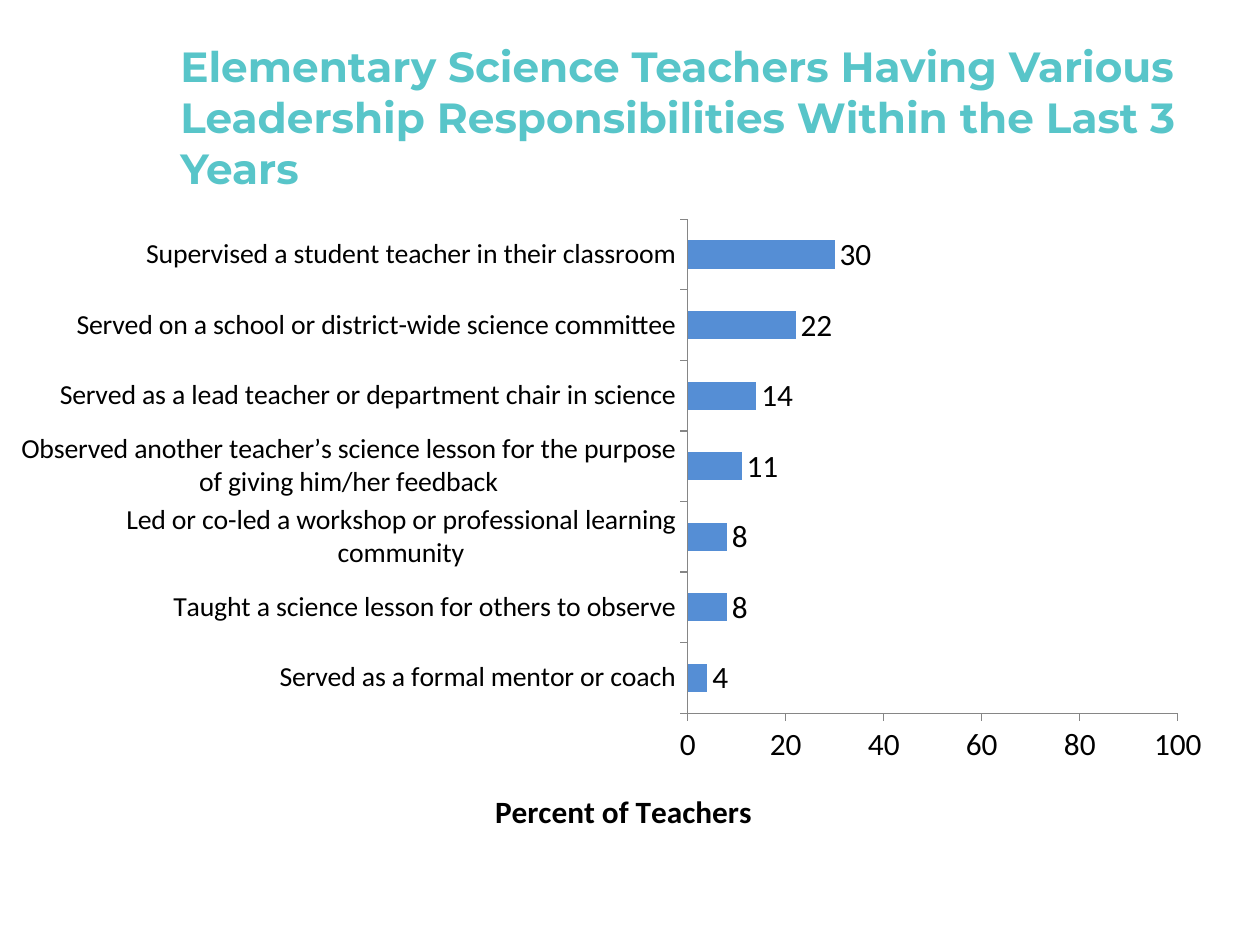
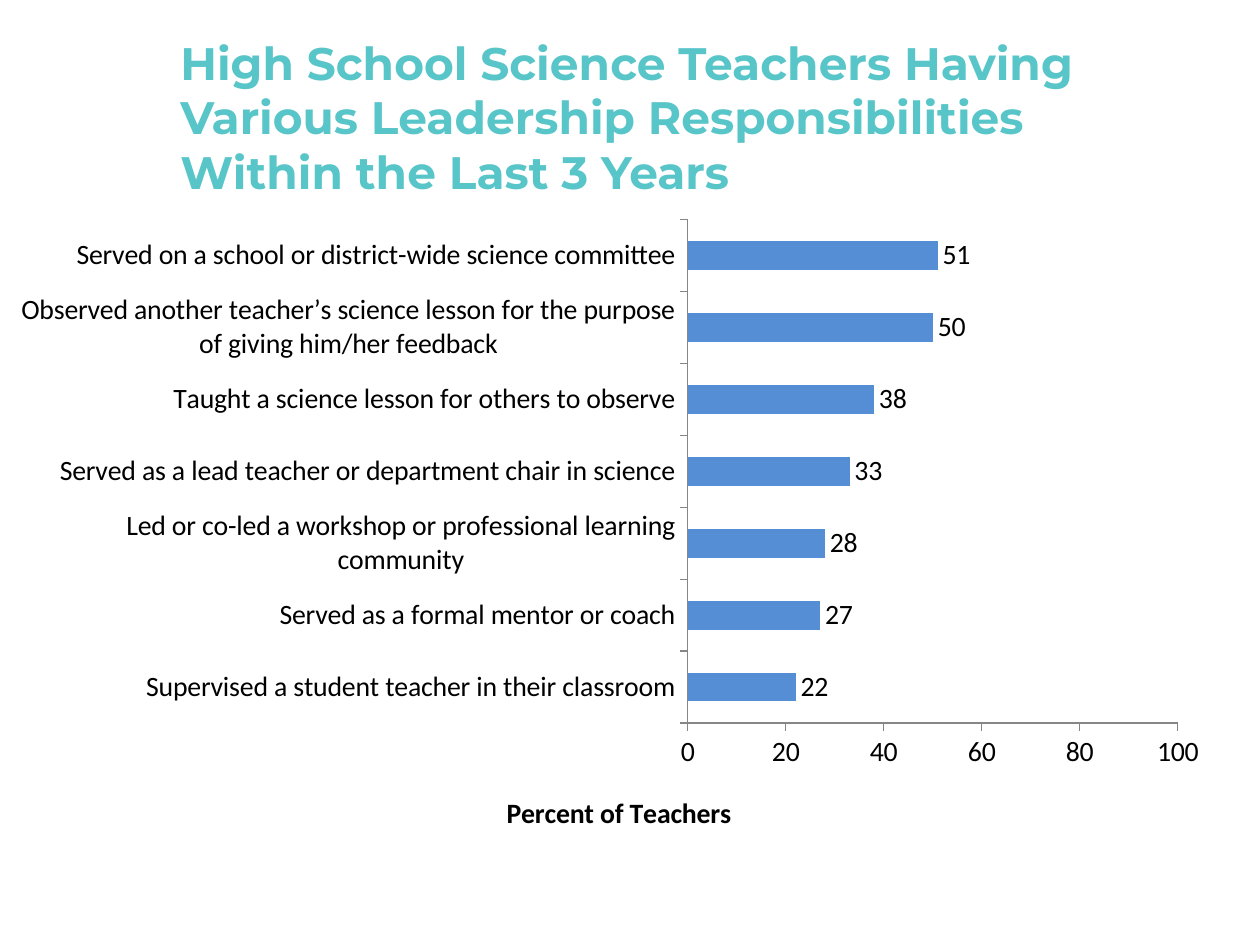
from pptx import Presentation
from pptx.chart.data import CategoryChartData
from pptx.dml.color import RGBColor
from pptx.enum.chart import XL_CHART_TYPE as ChartType
from pptx.enum.chart import XL_LABEL_POSITION as LabelPosition
from pptx.enum.chart import XL_TICK_MARK as TickMark
from pptx.enum.text import MSO_ANCHOR as Anchor
from pptx.enum.text import MSO_AUTO_SIZE as AutoSize
from pptx.enum.text import PP_ALIGN as Align
from pptx.oxml import parse_xml
from pptx.oxml.ns import nsdecls
from pptx.util import Cm, Pt

COLORS = {"title": "58C5C9", "bar": "558ED5", "text": "000000", "axis": "868686"}
TITLE_FONT = "Montserrat"
CHART_FONT = "Calibri"
TITLE_BOX = (Cm(3.38), Cm(0.76), Cm(20.75), Cm(3.18))
CHART_BOX = (Cm(0.43), Cm(4.04), Cm(24.56), Cm(12.9))
PLOT_AREA = {"x": 0.544, "y": 0.03, "w": 0.405, "h": 0.787}
CATEGORY_SIZE = 16

SUPERVISED = "Supervised a student teacher in their classroom"
COMMITTEE = "Served on a school or district-wide science committee"
LEAD = "Served as a lead teacher or department chair in science"
OBSERVED = "Observed another teacher’s science lesson for the purpose of giving him/her feedback"
WORKSHOP = "Led or co-led a workshop or professional learning community"
TAUGHT = "Taught a science lesson for others to observe"
MENTOR = "Served as a formal mentor or coach"

ELEMENTARY = {SUPERVISED: 30, COMMITTEE: 22, LEAD: 14, OBSERVED: 11,
              WORKSHOP: 8, TAUGHT: 8, MENTOR: 4}
HIGH_SCHOOL = {COMMITTEE: 51, OBSERVED: 50, TAUGHT: 38, LEAD: 33,
               WORKSHOP: 28, MENTOR: 27, SUPERVISED: 22}


def color(name):
    return RGBColor.from_string(COLORS[name])


def style_font(font, name, size, color_name, bold=False):
    font.name = name
    font.size = Pt(size)
    font.bold = bold
    font.color.rgb = color(color_name)


def add_title(page, school, size):
    box = page.shapes.title
    box.left, box.top, box.width, box.height = TITLE_BOX
    frame = box.text_frame
    frame.auto_size = AutoSize.NONE
    frame.word_wrap = True
    frame.vertical_anchor = Anchor.MIDDLE
    para = frame.paragraphs[0]
    para.alignment = Align.LEFT
    span = para.add_run()
    span.text = (f"{school} Science Teachers Having Various "
                 "Leadership Responsibilities Within the Last 3 Years")
    style_font(span.font, TITLE_FONT, size, "title", bold=True)


def make_layout(position, inner=False):
    target = '<c:layoutTarget val="inner"/>' if inner else ""
    modes = "".join(f'<c:{key}Mode val="edge"/>' for key in "xy")
    values = "".join(f'<c:{key} val="{value}"/>' for key, value in position.items())
    return parse_xml(f'<c:layout {nsdecls("c")}><c:manualLayout>'
                     f"{target}{modes}{values}</c:manualLayout></c:layout>")


def place_parts(chart, title_position):
    space = chart._chartSpace
    plot_area = space.xpath(".//c:plotArea")[0]
    title = space.xpath(".//c:valAx/c:title")[0]
    for parent in (plot_area, title):
        for layout in parent.xpath("./c:layout"):
            parent.remove(layout)
    plot_area.insert(0, make_layout(PLOT_AREA, inner=True))
    title.xpath("./c:tx")[0].addnext(make_layout(title_position))


def style_axis(axis, size):
    axis.has_major_gridlines = False
    axis.major_tick_mark = TickMark.OUTSIDE
    axis.minor_tick_mark = TickMark.NONE
    axis.format.line.color.rgb = color("axis")
    axis.format.line.width = Pt(0.75)
    style_font(axis.tick_labels.font, CHART_FONT, size, "text")


def add_bar_chart(page, percents, size, title_position):
    data = CategoryChartData()
    data.categories = list(reversed(percents.keys()))
    data.add_series("Series 1", list(reversed(percents.values())))
    chart = page.shapes.add_chart(ChartType.BAR_CLUSTERED, *CHART_BOX, data).chart
    chart.has_legend = False
    chart.has_title = False
    style_font(chart.font, CHART_FONT, size, "text")

    style_axis(chart.category_axis, CATEGORY_SIZE)
    axis = chart.value_axis
    style_axis(axis, size)
    axis.minimum_scale, axis.maximum_scale, axis.major_unit = 0, 100, 20
    span = axis.axis_title.text_frame.paragraphs[0].add_run()
    span.text = "Percent of Teachers"
    style_font(span.font, CHART_FONT, size, "text", bold=True)

    plot = chart.plots[0]
    plot.gap_width = 151
    plot.vary_by_categories = False
    bars = plot.series[0]
    bars.format.fill.solid()
    bars.format.fill.fore_color.rgb = color("bar")
    labels = bars.data_labels
    labels.show_value = True
    labels.position = LabelPosition.OUTSIDE_END
    style_font(labels.font, CHART_FONT, size, "text")
    place_parts(chart, title_position)


def add_teacher_page(deck, school, title_size, percents, chart_size, title_position):
    page = deck.slides.add_slide(deck.slide_layouts[5])
    add_title(page, school, title_size)
    add_bar_chart(page, percents, chart_size, title_position)


def main():
    deck = Presentation()
    deck.slide_width, deck.slide_height = Cm(25.4), Cm(19.05)
    add_teacher_page(deck, "Elementary", 24.1, ELEMENTARY, 18, {"x": 0.38, "y": 0.93})
    add_teacher_page(deck, "High School", 26, HIGH_SCHOOL, 16, {"x": 0.39, "y": 0.92})
    deck.save("out.pptx")


if __name__ == "__main__":
    main()
